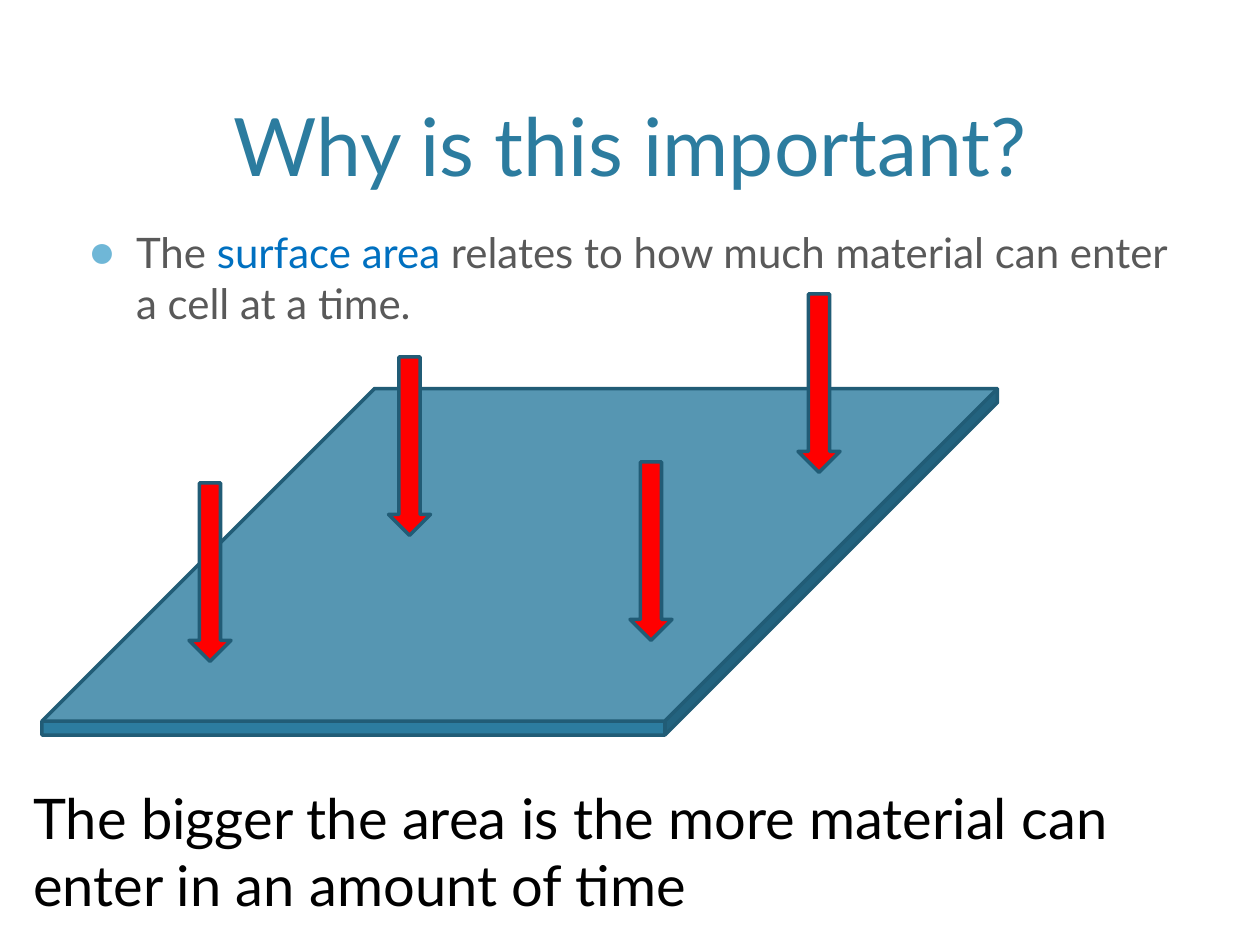
import pptx
import pptx.util
import pptx.dml.color
import pptx.enum.shapes
import pptx.enum.text
import pptx.oxml
import pptx.oxml.ns

TEAL = pptx.dml.color.RGBColor(0x2C, 0x7C, 0x9F)
DARK_TEAL = pptx.dml.color.RGBColor(0x21, 0x5C, 0x76)
RED = pptx.dml.color.RGBColor(0xFF, 0x00, 0x00)
BLUE = pptx.dml.color.RGBColor(0x00, 0x70, 0xC0)
GRAY = pptx.dml.color.RGBColor(0x59, 0x59, 0x59)
BLACK = pptx.dml.color.RGBColor(0x00, 0x00, 0x00)
BULLET_BLUE = pptx.dml.color.RGBColor(0x6F, 0xB7, 0xD7)

FONT = "Lato"
COLUMNS, ROWS = 60, 45
CELL = pptx.util.Inches(10) // COLUMNS

TITLE_BOX = (3.6, 0.7, 52.8, 8.8)
BODY_BOX = (3.6, 10.5, 52.8, 28.5)
DIAGRAM_BOX = (2, 18.5, 45.5, 16.5)
CONCLUSION_BOX = (1, 37, 57.5, 7.1)
ARROW_SIZE = (2, 8.5)
ARROW_OFFSETS = [(7, 4.5), (36, -4.5), (28, 3.5), (16.5, -1.5)]


def to_lengths(box):
    return [round(value * CELL) for value in box]


def place(shape, box):
    shape.left, shape.top, shape.width, shape.height = to_lengths(box)


def set_font(font, size, color):
    font.name = FONT
    font.size = pptx.util.Pt(size)
    font.color.rgb = color


def add_bullet(paragraph):
    properties = paragraph._p.get_or_add_pPr()
    indent = pptx.util.Inches(0.38)
    properties.set("marL", str(indent))
    properties.set("indent", str(-indent))
    namespace = pptx.oxml.ns.nsdecls("a")
    for markup in (
        f'<a:buClr {namespace}><a:srgbClr val="{BULLET_BLUE}"/></a:buClr>',
        f'<a:buSzPct {namespace} val="110000"/>',
        f'<a:buChar {namespace} char="●"/>',
    ):
        properties.append(pptx.oxml.parse_xml(markup))


def fill_title(title, box):
    place(title, box)
    frame = title.text_frame
    frame.text = "Why is this important?"
    frame.auto_size = pptx.enum.text.MSO_AUTO_SIZE.NONE
    frame.vertical_anchor = pptx.enum.text.MSO_ANCHOR.BOTTOM
    paragraph = frame.paragraphs[0]
    paragraph.alignment = pptx.enum.text.PP_ALIGN.CENTER
    set_font(paragraph.font, 46, TEAL)


def fill_body(body, box):
    place(body, box)
    frame = body.text_frame
    frame.auto_size = pptx.enum.text.MSO_AUTO_SIZE.NONE
    paragraph = frame.paragraphs[0]
    paragraph.space_before = pptx.util.Pt(20)
    add_bullet(paragraph)
    for text, color in (
        ("The ", GRAY),
        ("surface area ", BLUE),
        ("relates to how much material can enter a cell at a time.", GRAY),
    ):
        run = paragraph.add_run()
        run.text = text
        set_font(run.font, 24, color)


def add_outlined_shape(slide, kind, box, fill_color):
    shape = slide.shapes.add_shape(kind, *to_lengths(box))
    shape.shadow.inherit = False
    shape.fill.solid()
    shape.fill.fore_color.rgb = fill_color
    shape.line.color.rgb = DARK_TEAL
    shape.line.width = pptx.util.Pt(2)
    return shape


def add_surface_diagram(slide, box):
    kinds = pptx.enum.shapes.MSO_SHAPE
    slab = add_outlined_shape(slide, kinds.CUBE, box, TEAL)
    slab.adjustments[0] = 0.96
    left, top = box[:2]
    for column, row in ARROW_OFFSETS:
        arrow_box = (left + column, top + row, *ARROW_SIZE)
        add_outlined_shape(slide, kinds.DOWN_ARROW, arrow_box, RED)


def add_conclusion(slide, box):
    frame = slide.shapes.add_textbox(*to_lengths(box)).text_frame
    frame.word_wrap = True
    frame.auto_size = pptx.enum.text.MSO_AUTO_SIZE.SHAPE_TO_FIT_TEXT
    frame.text = "The bigger the area is the more material can enter in an amount of time"
    set_font(frame.paragraphs[0].font, 32, BLACK)


def main():
    presentation = pptx.Presentation()
    presentation.slide_width = COLUMNS * CELL
    presentation.slide_height = ROWS * CELL
    slide = presentation.slides.add_slide(presentation.slide_layouts[1])
    fill_title(slide.shapes.title, TITLE_BOX)
    fill_body(slide.placeholders[1], BODY_BOX)
    add_surface_diagram(slide, DIAGRAM_BOX)
    add_conclusion(slide, CONCLUSION_BOX)
    presentation.save("out.pptx")


if __name__ == "__main__":
    main()
